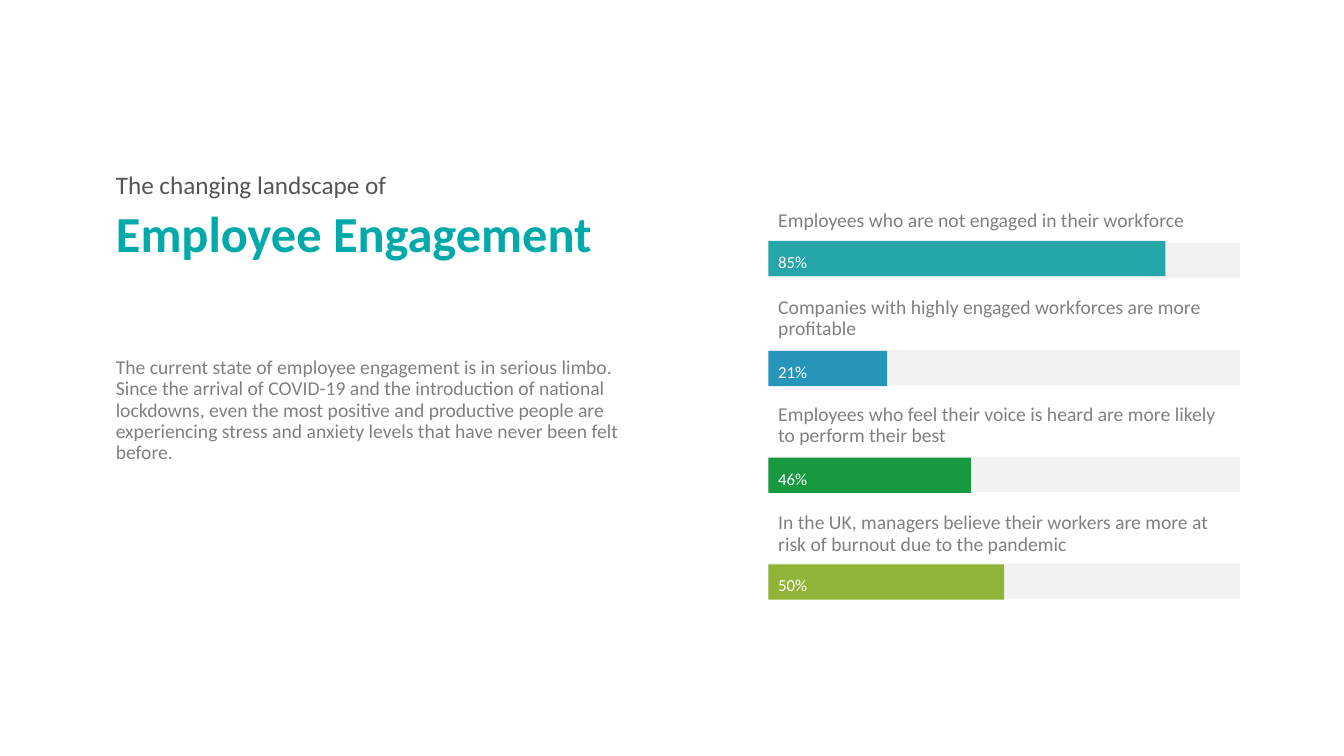
from pptx import Presentation
from pptx.dml.color import RGBColor
from pptx.enum.shapes import MSO_SHAPE
from pptx.enum.text import MSO_ANCHOR, MSO_AUTO_SIZE, PP_ALIGN
from pptx.util import Inches, Pt

RECTANGLE = MSO_SHAPE.RECTANGLE
TOP, MIDDLE = MSO_ANCHOR.TOP, MSO_ANCHOR.MIDDLE
LEFT = PP_ALIGN.LEFT
NO_AUTOFIT = MSO_AUTO_SIZE.NONE
TITLE_ONLY = 5

HEADLINE = "Employee Engagement"
INTRO = [
    ("The changing landscape of", 1.69, 0.35, 18, "555555", 0.8),
    ("The current state of employee engagement is in serious limbo. Since the arrival of "
     "COVID-19 and the introduction of national lockdowns, even the most positive and "
     "productive people are experiencing stress and anxiety levels that have never been "
     "felt before.", 3.5, 1.45, 14, "808080", 0.9),
]
FINDINGS = [
    ("Employees who are not engaged in their workforce", 2.04, 0.35,
     "85%", 2.39, 3.94, "26A6A8"),
    ("Companies with highly engaged workforces are more profitable", 2.9, 0.52,
     "21%", 3.48, 1.18, "2795BA"),
    ("Employees who feel their voice is heard are more likely to perform their best", 3.96, 0.52,
     "46%", 4.54, 2.01, "179940"),
    ("In the UK, managers believe their workers are more at risk of burnout due to the pandemic",
     5.04, 0.52, "50%", 5.6, 2.34, "90B437"),
]

INTRO_LEFT, INTRO_WIDTH = 1.05, 5.36
BARS_LEFT, TRACK_WIDTH, BAR_HEIGHT = 7.62, 4.68, 0.35
TRACK_TOP, TRACK_STEP = 2.41, 1.06


def color(value):
    return RGBColor.from_string(value)


def apply(target, formats):
    for attribute, value in formats.items():
        setattr(target, attribute, value)


def write(shape, text, size, ink, spacing, bold=False, anchor=TOP):
    frame = shape.text_frame
    apply(frame, {"word_wrap": True, "auto_size": NO_AUTOFIT, "vertical_anchor": anchor})
    frame.text = text
    paragraph = frame.paragraphs[0]
    apply(paragraph, {"alignment": LEFT, "line_spacing": spacing, "space_before": Pt(0)})
    apply(paragraph.font, {"name": "Calibri", "size": Pt(size), "bold": bold})
    paragraph.font.color.rgb = color(ink)


def add_text(left, top, width, height, *style):
    box = slide.shapes.add_textbox(Inches(left), Inches(top), Inches(width), Inches(height))
    write(box, *style)


def add_bar(top, width, fill):
    bar = slide.shapes.add_shape(RECTANGLE, Inches(BARS_LEFT), Inches(top),
                                 Inches(width), Inches(BAR_HEIGHT))
    bar.shadow.inherit = False
    bar.fill.solid()
    bar.fill.fore_color.rgb = color(fill)
    bar.line.fill.background()
    return bar


deck = Presentation()
apply(deck, {"slide_width": Inches(13.33), "slide_height": Inches(7.5)})
slide = deck.slides.add_slide(deck.slide_layouts[TITLE_ONLY])

headline = slide.shapes.title
apply(headline, {"left": Inches(INTRO_LEFT), "top": Inches(2.02),
                 "width": Inches(INTRO_WIDTH), "height": Inches(1.45)})
write(headline, HEADLINE, 36, "00A9AA", 0.9, True)

for text, top, height, size, ink, spacing in INTRO:
    add_text(INTRO_LEFT, top, INTRO_WIDTH, height, text, size, ink, spacing)

for row, (finding, finding_top, finding_height, share, top, width, fill) in enumerate(FINDINGS):
    add_bar(TRACK_TOP + row * TRACK_STEP, TRACK_WIDTH, "F2F2F2")
    add_text(BARS_LEFT, finding_top, TRACK_WIDTH, finding_height, finding, 14, "808080", 0.9)
    write(add_bar(top, width, fill), share, 12, "FFFFFF", 1.3, anchor=MIDDLE)

deck.save("out.pptx")
